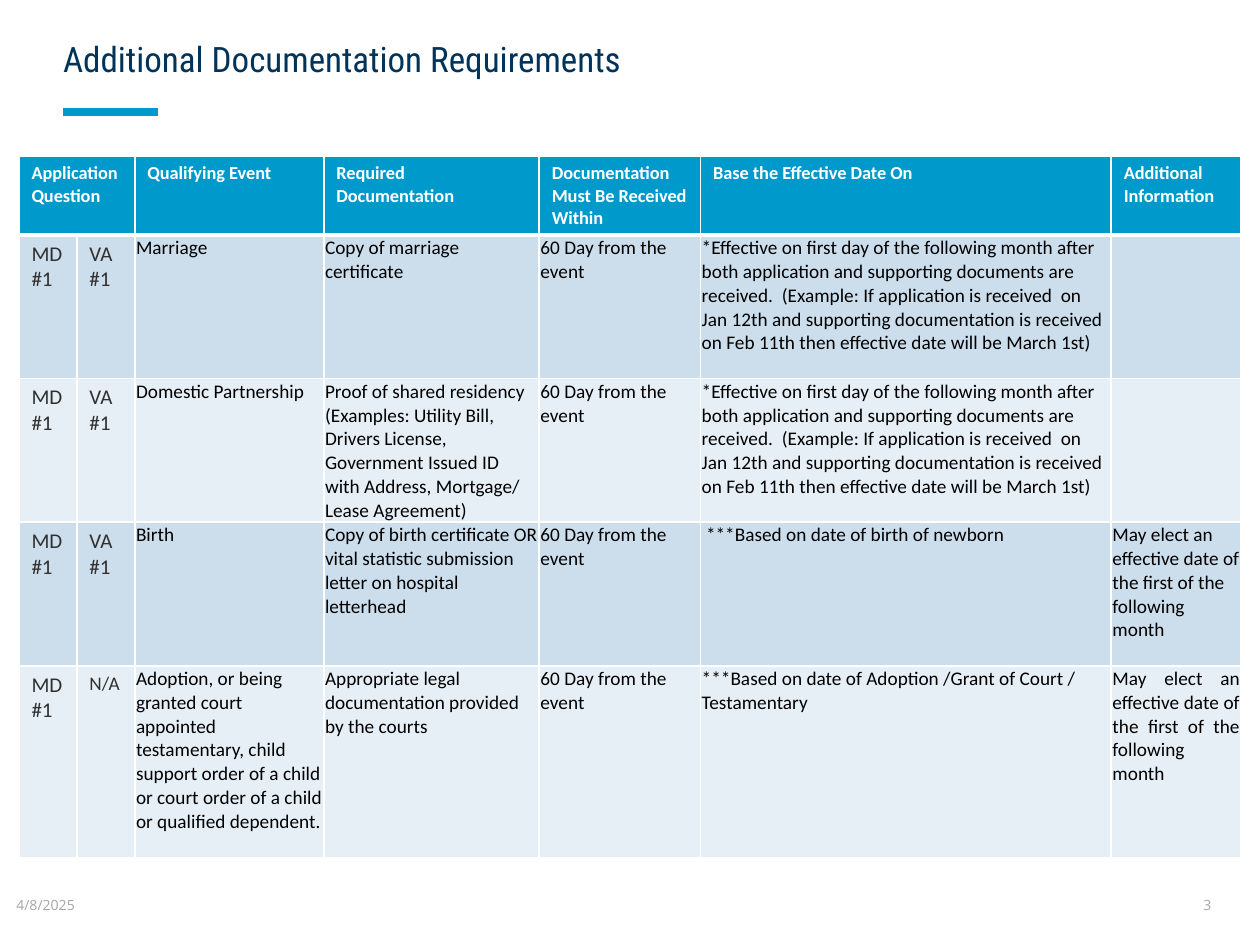
from lxml import etree
from pptx import Presentation
from pptx.dml.color import RGBColor
from pptx.enum.shapes import MSO_CONNECTOR as Conn
from pptx.enum.text import MSO_ANCHOR as Anchor, PP_ALIGN as Align
from pptx.oxml import parse_xml
from pptx.oxml.ns import nsdecls, qn
from pptx.util import Inches, Pt


def color(code):
    return RGBColor.from_string(code)


def style(para, name, size, code, bold=False):
    font = para.font
    font.name, font.size, font.bold = name, Pt(size), bold
    font.color.rgb = color(code)


prs = Presentation()
prs.slide_width, prs.slide_height = Inches(10), Inches(7.5)
slide = prs.slides.add_slide(prs.slide_layouts[5])

# Title
title = slide.shapes.title
title.left, title.top = Inches(0.5), Inches(0)
title.width, title.height = Inches(6.75), Inches(0.87)
frame = title.text_frame
frame.text = "Additional Documentation Requirements"
frame.word_wrap = True
frame.vertical_anchor = Anchor.MIDDLE
frame.margin_left = frame.margin_right = 0
frame.margin_top, frame.margin_bottom = Inches(0.3), Inches(0.2)
para = frame.paragraphs[0]
para.alignment = Align.LEFT
para.line_spacing = 0.9
style(para, "Roboto Condensed", 20, "003359")

# Accent line under the title
rule = slide.shapes.add_connector(
    Conn.STRAIGHT, Inches(0.5), Inches(0.89), Inches(1.25), Inches(0.89))
rule.line.color.rgb = color("0099CC")
rule.line.width = Pt(4.5)
etree.SubElement(rule._element.spPr, qn("a:effectLst"))

# Date and page number
for text, left, width, wrap in [("4/8/2025", 0.13, 0.73, False),
                                ("3", 9.55, 0.27, True)]:
    box = slide.shapes.add_textbox(
        Inches(left), Inches(6.98), Inches(width), Inches(0.4))
    frame = box.text_frame
    frame.text = text
    frame.word_wrap = wrap
    frame.vertical_anchor = Anchor.MIDDLE
    frame.margin_left = frame.margin_right = 0
    style(frame.paragraphs[0], "Open Sans", 8, "A6A6A6")

# Table content
days = "60 Day from the event"
first = ("*Effective on first day of the following month after both application "
         "and supporting documents are received.  (Example: If application is "
         "received  on Jan 12th and supporting documentation is received on "
         "Feb 11th then effective date will be March 1st)")
elect = "May elect an effective date of the first of the following month"
rows = [
    ["Application Question", "", "Qualifying Event", "Required Documentation",
     "Documentation Must Be Received Within", "Base the Effective Date On",
     "Additional Information"],
    ["MD #1", "VA #1", "Marriage", "Copy of marriage certificate", days, first, ""],
    ["MD #1", "VA #1", "Domestic Partnership",
     "Proof of shared residency (Examples: Utility Bill, Drivers License, "
     "Government Issued ID with Address, Mortgage/ Lease Agreement)",
     days, first, ""],
    ["MD #1", "VA #1", "Birth",
     "Copy of birth certificate OR vital statistic submission letter on "
     "hospital letterhead",
     days, " ***Based on date of birth of newborn", elect],
    ["MD #1", "N/A",
     "Adoption, or being granted court appointed testamentary, child support "
     "order of a child or court order of a child or qualified dependent.",
     "Appropriate legal documentation provided by the courts", days,
     "***Based on date of Adoption /Grant of Court / Testamentary", elect + " "],
]
widths = [0.46, 0.46, 1.5, 1.71, 1.28, 3.26, 1.03]
heights = [0.62, 1.14, 1.14, 1.14, 1.52]

# Table
table = slide.shapes.add_table(
    len(rows), len(widths), Inches(0.15), Inches(1.24),
    Inches(sum(widths)), Inches(sum(heights))).table
for col, width in zip(table.columns, widths):
    col.width = Inches(width)
for row, height in zip(table.rows, heights):
    row.height = Inches(height)
table.cell(0, 0).merge(table.cell(0, 1))

for r, row in enumerate(rows):
    for c, text in enumerate(row):
        cell = table.cell(r, c)
        # White borders, heavier below the header
        props = cell._tc.get_or_add_tcPr()
        for side in "LRTB":
            heavy = (r, side) in [(0, "B"), (1, "T")]
            props.append(parse_xml(
                f'<a:ln{side} {nsdecls("a")} w="{Pt(3 if heavy else 1)}">'
                '<a:solidFill><a:srgbClr val="FFFFFF"/></a:solidFill>'
                f'</a:ln{side}>'))
        cell.fill.solid()
        shade = "0099CC" if r == 0 else "CCDEEC" if r % 2 else "E7EFF6"
        cell.fill.fore_color.rgb = color(shade)
        if not cell.is_spanned:
            cell.text = text
        para = cell.text_frame.paragraphs[0]
        if r == 0:
            style(para, "Calibri", 10.5, "FFFFFF", True)
        elif c < 2:
            style(para, "Calibri", 11 if text == "N/A" else 12, "303030")
        else:
            style(para, "Calibri", 11, "000000")
            cell.margin_left = cell.margin_right = cell.margin_top = Inches(0.01)
            cell.margin_bottom = 0
table.cell(4, 6).text_frame.paragraphs[0].alignment = Align.JUSTIFY

prs.save("out.pptx")
